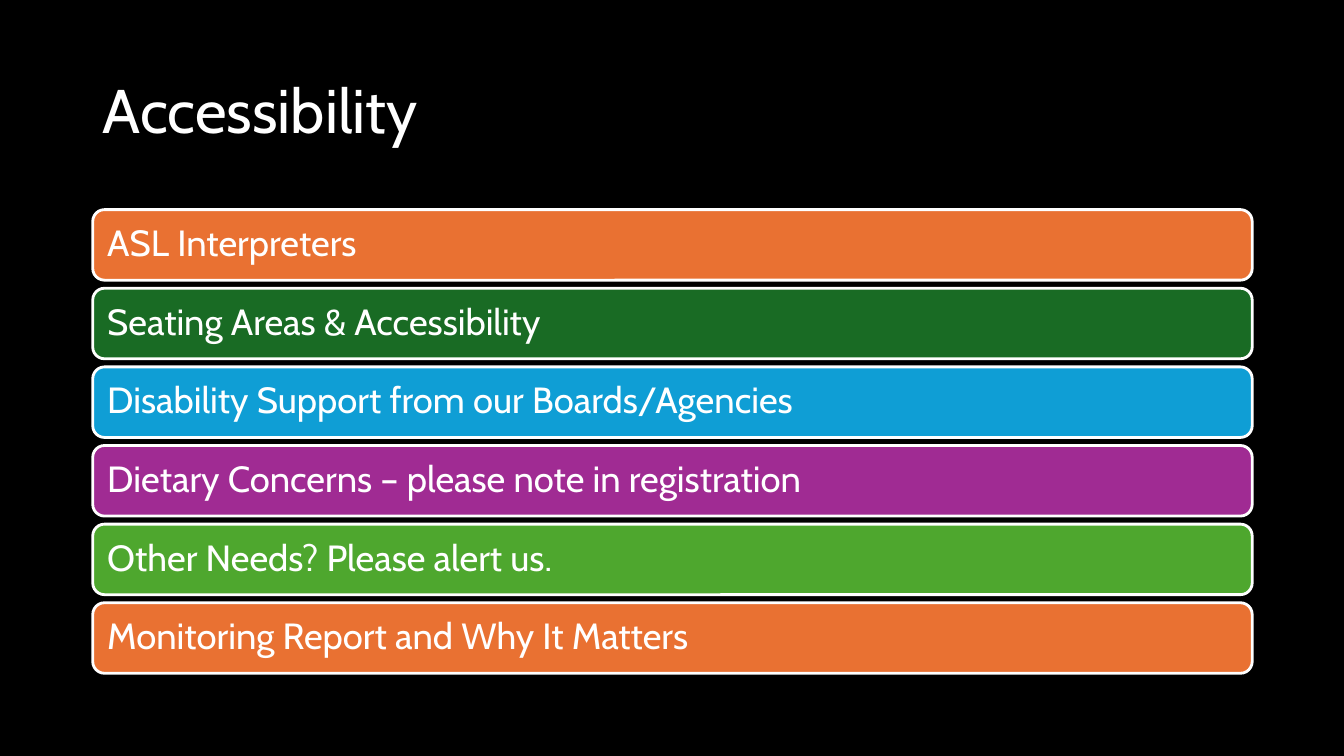
from pptx import Presentation
from pptx.dml.color import RGBColor
from pptx.enum import shapes, text
from pptx.util import Inches, Pt

FONT = "Cabin"
WHITE = "FFFFFF"

# Grid: one column, six rows
LEFT, WIDTH = 0.92, 11.5
TITLE_TOP, TITLE_HEIGHT = 0.4, 1.45
FIRST_ROW, ROW_STEP, BAR_HEIGHT = 2.08, 0.78, 0.7
BAR_INSET = 0.11

TOPICS = [
    ("ASL Interpreters", "E97132"),
    ("Seating Areas & Accessibility", "196B24"),
    ("Disability Support from our Boards/Agencies", "0F9ED5"),
    ("Dietary Concerns – please note in registration", "A02B93"),
    ("Other Needs? Please alert us.", "4EA72E"),
    ("Monitoring Report and Why It Matters", "E97132"),
]


def paint(color_format, color):
    color_format.rgb = RGBColor.from_string(color)


def write(shape, words, size):
    frame = shape.text_frame
    frame.word_wrap = True
    frame.auto_size = text.MSO_AUTO_SIZE.NONE
    frame.vertical_anchor = text.MSO_ANCHOR.MIDDLE
    frame.text = words
    paragraph = frame.paragraphs[0]
    paragraph.alignment = text.PP_ALIGN.LEFT
    paragraph.line_spacing = 0.9
    paragraph.font.name = FONT
    paragraph.font.size = Pt(size)
    paint(paragraph.font.color, WHITE)


def format_title(slide, words):
    title = slide.shapes.title
    title.left, title.top = Inches(LEFT), Inches(TITLE_TOP)
    title.width, title.height = Inches(WIDTH), Inches(TITLE_HEIGHT)
    write(title, words, 44)


def add_bar(slide, row, words, color):
    bar = slide.shapes.add_shape(
        shapes.MSO_SHAPE.ROUNDED_RECTANGLE,
        Inches(LEFT), Inches(FIRST_ROW + row * ROW_STEP),
        Inches(WIDTH), Inches(BAR_HEIGHT))
    bar.shadow.inherit = False
    bar.fill.solid()
    paint(bar.fill.fore_color, color)
    paint(bar.line.color, WHITE)
    bar.line.width = Pt(2)
    frame = bar.text_frame
    frame.margin_left = frame.margin_right = Inches(BAR_INSET)
    frame.margin_top = frame.margin_bottom = Inches(BAR_INSET)
    write(bar, words, 26)


def main():
    presentation = Presentation()
    presentation.slide_width = Inches(13.33)
    presentation.slide_height = Inches(7.5)
    slide = presentation.slides.add_slide(presentation.slide_layouts[5])

    # Background
    slide.background.fill.solid()
    paint(slide.background.fill.fore_color, "000000")

    # Title and topic bars
    format_title(slide, "Accessibility")
    for row, (words, color) in enumerate(TOPICS):
        add_bar(slide, row, words, color)

    presentation.save("out.pptx")


if __name__ == "__main__":
    main()
